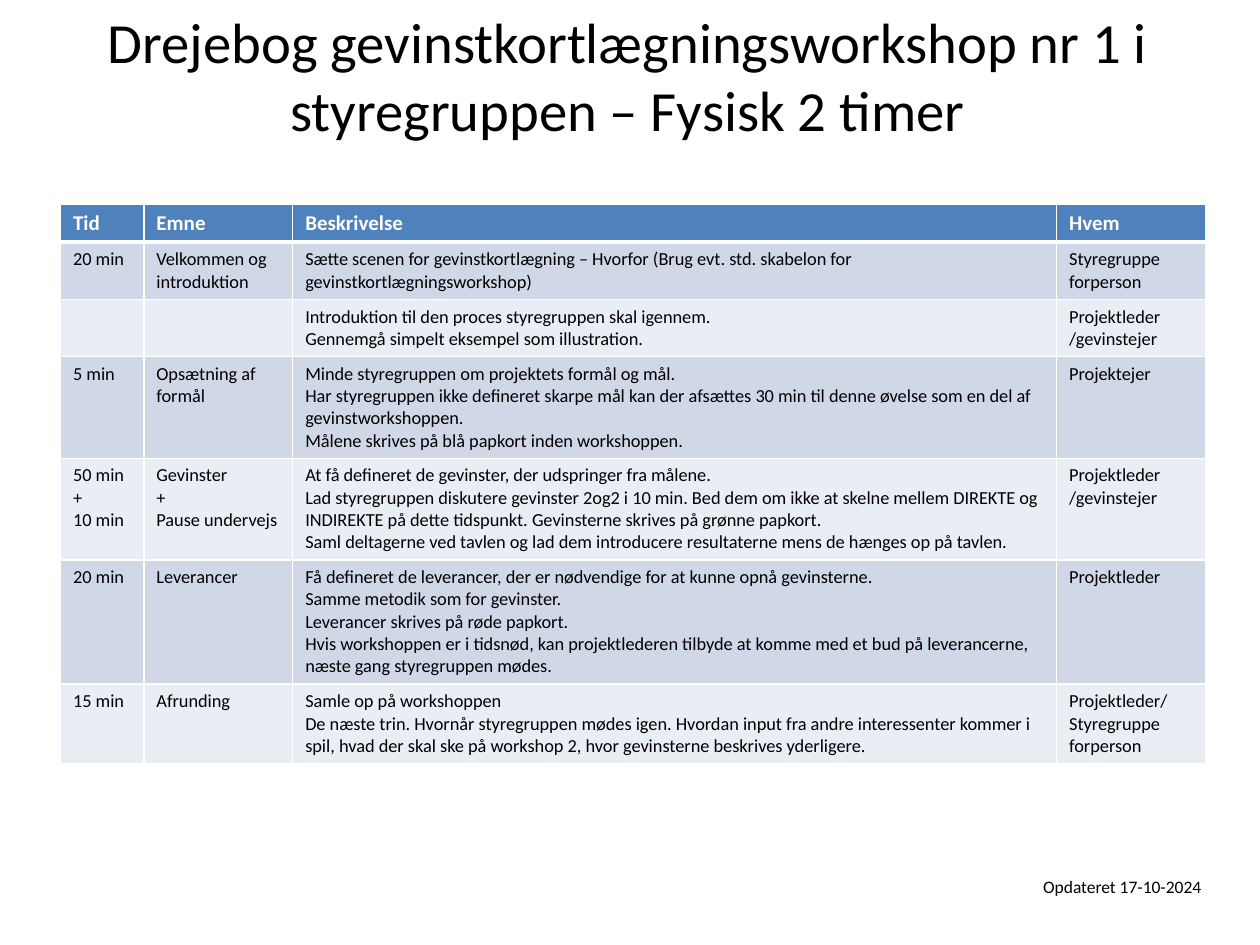
import pptx
import pptx.util
import pptx.dml.color
import pptx.enum.text
import pptx.oxml
import pptx.oxml.ns
from lxml import etree

Cm = pptx.util.Cm
Pt = pptx.util.Pt
ENUM = pptx.enum.text

HEX = {
    "ink": "000000",
    "paper": "FFFFFF",
    "head": "4F81BD",
    "odd": "D0D8E8",
    "even": "E9EDF4",
}

HEADS = ("Tid", "Emne", "Beskrivelse", "Hvem")
PLAN = [
    ("20 min", "Velkommen og introduktion",
     "Sætte scenen for gevinstkortlægning – Hvorfor (Brug evt. std. skabelon for "
     "gevinstkortlægningsworkshop)",
     "Styregruppe\nforperson"),
    ("", "",
     "Introduktion til den proces styregruppen skal igennem.\n"
     "Gennemgå simpelt eksempel som illustration.",
     "Projektleder /gevinstejer"),
    ("5 min", "Opsætning af formål",
     "Minde styregruppen om projektets formål og mål.\n"
     "Har styregruppen ikke defineret skarpe mål kan der afsættes 30 min til denne "
     "øvelse som en del af gevinstworkshoppen.\n"
     "Målene skrives på blå papkort inden workshoppen.",
     "Projektejer"),
    ("50 min\n+\n10 min", "Gevinster\n+\nPause undervejs",
     "At få defineret de gevinster, der udspringer fra målene.\n"
     "Lad styregruppen diskutere gevinster 2og2 i 10 min. Bed dem om ikke at skelne "
     "mellem DIREKTE og INDIREKTE på dette tidspunkt. Gevinsterne skrives på grønne "
     "papkort.\n"
     "Saml deltagerne ved tavlen og lad dem introducere resultaterne mens de hænges "
     "op på tavlen.",
     "Projektleder\n/gevinstejer"),
    ("20 min", "Leverancer",
     "Få defineret de leverancer, der er nødvendige for at kunne opnå gevinsterne.\n"
     "Samme metodik som for gevinster.\n"
     "Leverancer skrives på røde papkort.\n"
     "Hvis workshoppen er i tidsnød, kan projektlederen tilbyde at komme med et bud "
     "på leverancerne, næste gang styregruppen mødes.",
     "Projektleder"),
    ("15 min", "Afrunding",
     "Samle op på workshoppen\n"
     "De næste trin. Hvornår styregruppen mødes igen. Hvordan input fra andre "
     "interessenter kommer i spil, hvad der skal ske på workshop 2, hvor gevinsterne "
     "beskrives yderligere.",
     "Projektleder/\nStyregruppe\nforperson"),
]


def color(name):
    return pptx.dml.color.RGBColor.from_string(HEX[name])


def write(frame, text, size=10.5, ink="ink", bold=False, align="LEFT", font="Calibri"):
    """Fill a text frame, one paragraph for each line."""
    frame.text = text
    for para in frame.paragraphs:
        para.alignment = getattr(ENUM.PP_ALIGN, align)
        for run in para.runs:
            run.font.name = font
            run.font.size = Pt(size)
            run.font.bold = bold
            run.font.color.rgb = color(ink)


def edge(cell, side, width):
    """Add one white border; call in the order L, R, T, B, before the fill."""
    props = cell._tc.get_or_add_tcPr()
    line = etree.SubElement(props, pptx.oxml.ns.qn("a:ln" + side), w=str(Pt(width)))
    fill = etree.SubElement(line, pptx.oxml.ns.qn("a:solidFill"))
    etree.SubElement(fill, pptx.oxml.ns.qn("a:srgbClr"), val=HEX["paper"])


class Deck:
    def __init__(self, wide, high):
        self.show = pptx.Presentation()
        self.show.slide_width, self.show.slide_height = Cm(wide), Cm(high)
        self.slide = self.show.slides.add_slide(self.show.slide_layouts[5])

    def title(self, text, box, **form):
        shape = self.slide.shapes.title
        shape.left, shape.top, shape.width, shape.height = map(Cm, box)
        frame = shape.text_frame
        frame.word_wrap = True
        frame.auto_size = ENUM.MSO_AUTO_SIZE.NONE
        frame.vertical_anchor = ENUM.MSO_ANCHOR.MIDDLE
        write(frame, text, **form)

    def note(self, text, box, **form):
        frame = self.slide.shapes.add_textbox(*map(Cm, box)).text_frame
        frame.word_wrap = True
        frame.auto_size = ENUM.MSO_AUTO_SIZE.SHAPE_TO_FIT_TEXT
        write(frame, text, **form)

    def table(self, rows, box, cols, highs):
        shape = self.slide.shapes.add_table(len(rows), len(cols), *map(Cm, box))
        grid = shape.table
        for col, wide in zip(grid.columns, cols):
            col.width = Cm(wide)
        for num, row in enumerate(rows):
            grid.rows[num].height = Cm(highs[min(num, 1)])
            for cell, text in zip(grid.rows[num].cells, row):
                self.cell(cell, text, num)
        shape.height = Cm(box[3])

    def cell(self, cell, text, num):
        # A thick rule parts the header from the body
        tops = 3 if num == 1 else 1
        base = 3 if num == 0 else 1
        for side, width in (("L", 1), ("R", 1), ("T", tops), ("B", base)):
            edge(cell, side, width)
        cell.fill.solid()
        if num == 0:
            cell.fill.fore_color.rgb = color("head")
            write(cell.text_frame, text, size=12, ink="paper", bold=True)
        else:
            cell.fill.fore_color.rgb = color("odd" if num % 2 else "even")
            write(cell.text_frame, text)


def main():
    deck = Deck(25.4, 19.05)
    # Title
    deck.title("Drejebog gevinstkortlægningsworkshop nr 1 i styregruppen – Fysisk 2 timer",
               (1.22, 0.53, 22.86, 1.96), size=32.4, align="CENTER")
    # Workshop plan
    deck.table([HEADS] + PLAN, (1.22, 4.11, 23.08, 11.18),
               cols=(1.68, 3, 15.4, 3), highs=(0.61, 1.04))
    # Date of last change
    deck.note("Opdateret 17-10-2024", (20.78, 17.53, 3.99, 0.69), size=10)
    deck.show.save("out.pptx")


if __name__ == "__main__":
    main()
